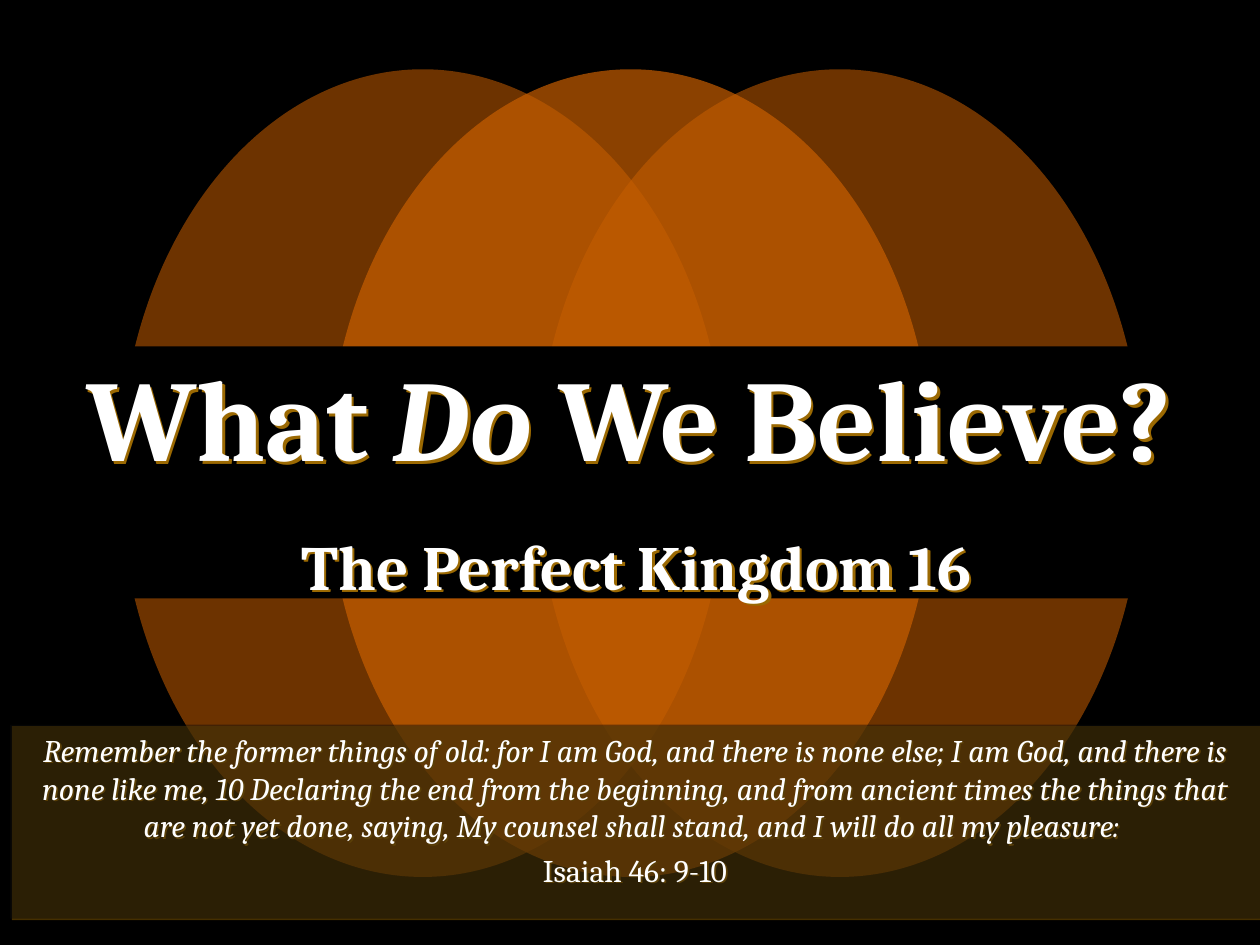
"""Build the opening slide: overlapping ellipses, a title band and a verse."""
from lxml.etree import SubElement
from pptx import Presentation
from pptx.dml.color import RGBColor
from pptx.enum.shapes import MSO_SHAPE as Shape
from pptx.enum.text import MSO_ANCHOR as Anchor, MSO_AUTO_SIZE as AutoSize, PP_ALIGN as Align
from pptx.oxml.ns import qn
from pptx.util import Inches, Pt

COLORS = {"black": "000000", "orange": "C75E00", "panel": "0D0D0D",
          "gold": "9B6902", "white": "FFFFFF"}
FONT = "Cambria"
ELLIPSES = [(0.95, 55), (4.26, 55), (2.6, 70)]
TITLE = [[("What ", 65.7, False), ("Do", 65.7, True), (" We Believe?", 65.7, False)],
         [(" The Perfect Kingdom 16", 36, False)]]
VERSE = [[("Remember the former things of old: for I am God, and there is none else; "
           "I am God, and there is none like me, 10 Declaring the end from the beginning, "
           "and from ancient times the things that are not yet done, saying, "
           "My counsel shall stand, and I will do all my pleasure: ", 18, True)],
         [("Isaiah 46: 9-10", 18, False)]]


def color(name):
    return RGBColor.from_string(COLORS[name])


def place(shape, left, top, width, height):
    shape.left, shape.top = Inches(left), Inches(top)
    shape.width, shape.height = Inches(width), Inches(height)


def paint(shape, name, opacity=100):
    shape.fill.solid()
    shape.fill.fore_color.rgb = color(name)
    shape.line.fill.background()
    shape.shadow.inherit = False
    if opacity < 100:
        tint = shape._element.spPr.find(qn("a:solidFill"))[0]
        SubElement(tint, qn("a:alpha"), val=str(opacity * 1000))


def add_shadow(shape, distance):
    shape.shadow.inherit = False
    effects = shape._element.spPr.find(qn("a:effectLst"))
    shadow = SubElement(effects, qn("a:outerShdw"), dist=str(Pt(distance)),
                        dir="2700000", algn="ctr", rotWithShape="0")
    SubElement(shadow, qn("a:srgbClr"), val=COLORS["gold"])


def write(shape, lines, bold, gaps, spacing, anchor):
    frame = shape.text_frame
    frame.word_wrap = True
    frame.auto_size = AutoSize.NONE
    frame.vertical_anchor = anchor
    for index, (line, gap) in enumerate(zip(lines, gaps)):
        para = frame.add_paragraph() if index else frame.paragraphs[0]
        para.alignment = Align.CENTER
        para.space_before = Pt(gap)
        para.line_spacing = spacing
        for text, size, italic in line:
            span = para.add_run()
            span.text = text
            span.font.name, span.font.size = FONT, Pt(size)
            span.font.bold, span.font.italic = bold, italic
            span.font.color.rgb = color("white")


def add_backdrop(page):
    group = page.shapes.add_group_shape()
    for left, opacity in ELLIPSES:
        ellipse = group.shapes.add_shape(
            Shape.OVAL, Inches(left), Inches(0.55), Inches(4.81), Inches(6.41))
        paint(ellipse, "orange", opacity)
    band = page.shapes.add_shape(Shape.RECTANGLE, 0, Inches(2.75), Inches(10), Inches(2))
    paint(band, "black")


def main():
    deck = Presentation()
    deck.slide_width, deck.slide_height = Inches(10), Inches(7.5)
    page = deck.slides.add_slide(deck.slide_layouts[0])
    page.background.fill.solid()
    page.background.fill.fore_color.rgb = color("black")
    title, verse = page.placeholders
    add_backdrop(page)
    for box in (title, verse):
        page.shapes._spTree.append(box._element)

    place(title, 0.08, 3.08, 9.83, 1.51)
    title.fill.background()
    add_shadow(title, 2)
    write(title, TITLE, True, (0, 28), 0.9, Anchor.MIDDLE)

    place(verse, 0.08, 5.75, 9.92, 1.54)
    paint(verse, "panel", 45)
    add_shadow(verse, 1.4)
    write(verse, VERSE, False, (3.6, 3.6), 1.0, Anchor.TOP)
    deck.save("out.pptx")


if __name__ == "__main__":
    main()
